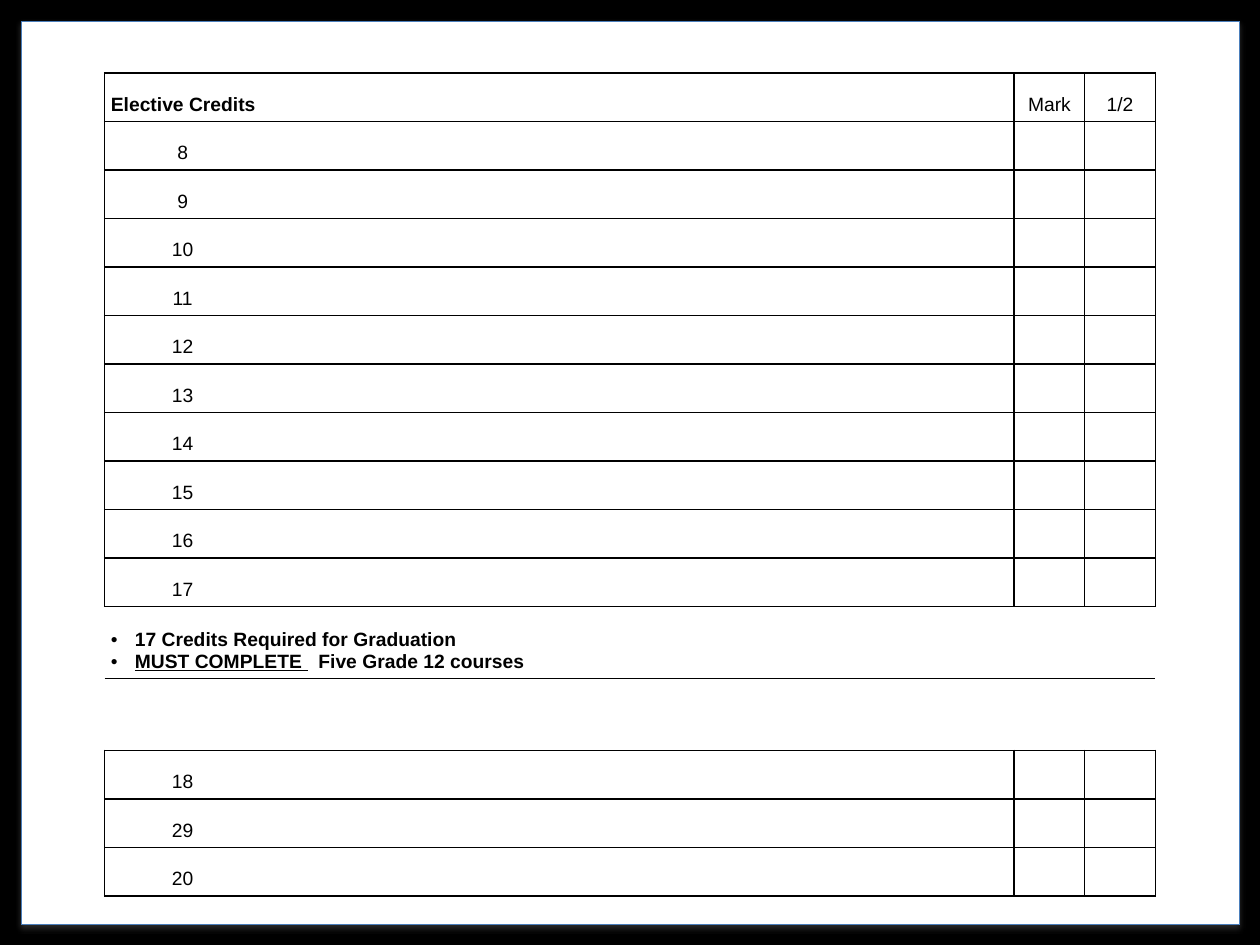
"""Build the elective credits tracking slide."""
from dataclasses import dataclass

from lxml import etree
from pptx import Presentation
from pptx.dml.color import RGBColor
from pptx.enum import shapes, text
from pptx.oxml import ns
from pptx.util import Inches, Pt


@dataclass(frozen=True)
class Theme:
    """Colours, type and line widths."""
    black: str = "000000"
    white: str = "FFFFFF"
    edge: str = "4A7EBB"
    shade: str = "808080"
    font: str = "Arial"
    size: float = 11
    edge_width: float = 0.75
    rule_width: float = 1


@dataclass(frozen=True)
class Words:
    """A stretch of text in one style."""
    content: str
    bold: bool = False
    underline: bool = False


THEME = Theme()
COLUMNS = (1.24, 0.81, 0.98, 1.28, 0.9, 1.11, 0.9, 0.56, 0.56)
MARK, HALF = 7, 8
CREDITS = [str(number) for number in range(8, 18)]
EXTRA_CREDITS = ["18", "29", "20"]
NOTE_ROW = len(CREDITS) + 1
GAP_ROW = NOTE_ROW + 1
ROW_COUNT = GAP_ROW + 1 + len(EXTRA_CREDITS)
ROW_HEIGHT, NOTE_HEIGHT = 0.28, 0.57
PADDING, EMPTY_PADDING = 0.05, 0.04
INDENT = 0.19
NO_GRID_STYLE = "{2D5ABB26-0587-4C30-8999-92F81FD0307C}"
REQUIREMENTS = (
    (Words("17 Credits Required for Graduation", bold=True),),
    (Words("MUST COMPLETE ", bold=True, underline=True), Words("  "),
     Words("Five Grade 12 courses", bold=True)),
)


def colour(code: str) -> RGBColor:
    """Turn a hex code into a colour."""
    return RGBColor.from_string(code)


def child(parent, tag: str, **attributes):
    """Append a DrawingML element."""
    return etree.SubElement(parent, ns.qn(tag), attributes)


def draw_page(slide) -> None:
    """Draw the white sheet with its soft shadow."""
    sheet = slide.shapes.add_shape(
        shapes.MSO_SHAPE.RECTANGLE, Inches(0.17), Inches(0.17), Inches(9.67), Inches(7.17))
    sheet.fill.solid()
    sheet.fill.fore_color.rgb = colour(THEME.white)
    sheet.line.color.rgb = colour(THEME.edge)
    sheet.line.width = Pt(THEME.edge_width)
    sheet.shadow.inherit = False
    effects = sheet._element.spPr.find(ns.qn("a:effectLst"))
    shadow = child(effects, "a:outerShdw", blurRad=str(Pt(3)), dist=str(Pt(1.8)),
                   dir="5400000", rotWithShape="0")
    tint = child(shadow, "a:srgbClr", val=THEME.shade)
    child(tint, "a:alpha", val="35000")


def ruled_sides(row: int, column: int) -> str:
    """Name the sides of a cell that carry a rule."""
    if row == NOTE_ROW:
        return "T"
    if row == GAP_ROW:
        return "B"
    if column >= MARK:
        return "LRTB"
    return {0: "LTB", MARK - 1: "RTB"}.get(column, "TB")


def rule_cell(cell, sides: str) -> None:
    """Rule the given sides of a cell and clear its fill."""
    properties = cell._tc.get_or_add_tcPr()
    for side in sides:
        rule = child(properties, f"a:ln{side}", w=str(Pt(THEME.rule_width)))
        child(child(rule, "a:solidFill"), "a:srgbClr", val=THEME.black)
    cell.fill.background()


def pad_cell(cell, vertical: float) -> None:
    """Set the margins of a cell."""
    cell.margin_left = cell.margin_right = Inches(PADDING)
    cell.margin_top = cell.margin_bottom = Inches(vertical)


def add_words(paragraph, words: Words) -> None:
    """Add one styled run."""
    run = paragraph.add_run()
    run.text = words.content
    run.font.name = THEME.font
    run.font.size = Pt(THEME.size)
    run.font.color.rgb = colour(THEME.black)
    run.font.bold = words.bold
    run.font.underline = words.underline


def write_label(cell, words: Words, align=text.PP_ALIGN.CENTER) -> None:
    """Write one line at the foot of a cell."""
    pad_cell(cell, PADDING)
    cell.vertical_anchor = text.MSO_ANCHOR.BOTTOM
    paragraph = cell.text_frame.paragraphs[0]
    paragraph.alignment = align
    add_words(paragraph, words)


def write_requirements(cell) -> None:
    """Write the bulleted graduation requirements."""
    pad_cell(cell, PADDING)
    cell.vertical_anchor = text.MSO_ANCHOR.BOTTOM
    for index, requirement in enumerate(REQUIREMENTS):
        frame = cell.text_frame
        paragraph = frame.add_paragraph() if index else frame.paragraphs[0]
        properties = paragraph._p.get_or_add_pPr()
        properties.set("marL", str(Inches(INDENT)))
        properties.set("indent", str(-Inches(INDENT)))
        child(properties, "a:buFont", typeface=THEME.font)
        child(properties, "a:buChar", char="•")
        for words in requirement:
            add_words(paragraph, words)


def draw_credits(slide) -> None:
    """Draw the credits table with its labels and notes."""
    ledger = slide.shapes.add_table(
        ROW_COUNT, len(COLUMNS), Inches(0.83), Inches(0.58), Inches(8.33), Inches(5.12)).table
    ledger.first_row = ledger.horz_banding = False
    ledger._tbl.tblPr.find(ns.qn("a:tableStyleId")).text = NO_GRID_STYLE
    for column, width in zip(ledger.columns, COLUMNS):
        column.width = Inches(width)
    for index, row in enumerate(ledger.rows):
        row.height = Inches(NOTE_HEIGHT if index in (NOTE_ROW, GAP_ROW) else ROW_HEIGHT)
        for column, cell in enumerate(row.cells):
            pad_cell(cell, EMPTY_PADDING)
            rule_cell(cell, ruled_sides(index, column))
    ledger.cell(0, 0).merge(ledger.cell(0, 1))
    ledger.cell(NOTE_ROW, 0).merge(ledger.cell(NOTE_ROW, 3))
    write_label(ledger.cell(0, 0), Words("Elective Credits", bold=True), text.PP_ALIGN.LEFT)
    write_label(ledger.cell(0, MARK), Words("Mark"))
    write_label(ledger.cell(0, HALF), Words("1/2"))
    for first, numbers in ((1, CREDITS), (GAP_ROW + 1, EXTRA_CREDITS)):
        for row, number in enumerate(numbers, first):
            write_label(ledger.cell(row, 0), Words(number))
    write_requirements(ledger.cell(NOTE_ROW, 0))


def main() -> None:
    """Build and save the deck."""
    deck = Presentation()
    deck.slide_width, deck.slide_height = Inches(10), Inches(7.5)
    slide = deck.slides.add_slide(deck.slide_layouts[6])
    slide.background.fill.solid()
    slide.background.fill.fore_color.rgb = colour(THEME.black)
    draw_page(slide)
    draw_credits(slide)
    deck.save("out.pptx")


if __name__ == "__main__":
    main()
